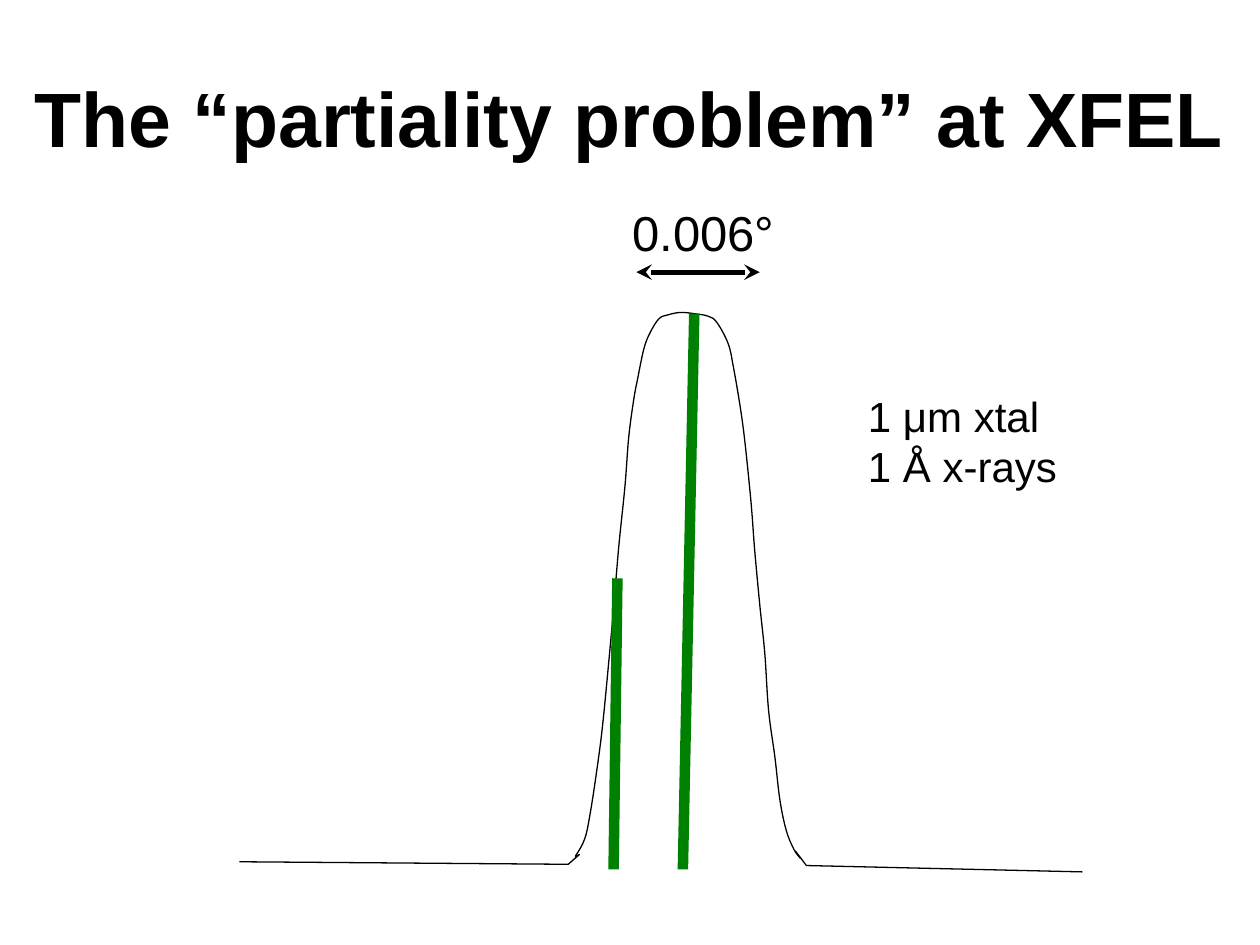
from pptx import Presentation
from pptx.dml.color import RGBColor
from pptx.enum.shapes import MSO_CONNECTOR
from pptx.enum.text import MSO_ANCHOR, MSO_AUTO_SIZE, PP_ALIGN
from pptx.oxml.ns import qn
from pptx.util import Inches, Pt
from lxml import etree

STRAIGHT = MSO_CONNECTOR.STRAIGHT
TOP, MIDDLE = MSO_ANCHOR.TOP, MSO_ANCHOR.MIDDLE
LEFT, CENTER = PP_ALIGN.LEFT, PP_ALIGN.CENTER
FIT_SHAPE = MSO_AUTO_SIZE.SHAPE_TO_FIT_TEXT

COLUMNS, ROWS = 100, 75
BLACK, WHITE, GREEN = "000000", "FFFFFF", "008000"

# Rocking curve in grid units: left foot, up over the peak, right foot
BASELINE_START, BASELINE_END = (19, 68.4), (85.9, 69.2)
BELL = [
    (45.1, 68.6), (45.7, 67.9), (46.4, 66.6), (46.8, 64.8), (47.3, 61.6),
    (47.8, 57.8), (48.3, 52.7), (48.7, 48.3), (49.1, 43.5), (49.6, 38.6),
    (49.9, 34.7), (50.3, 31.7), (50.6, 30.1), (51.1, 27.7), (51.6, 26.4),
    (52.3, 25.3), (53, 25), (54, 24.8), (55.1, 24.9), (56.2, 25.1),
    (56.9, 25.6), (57.8, 27.3), (58.2, 29.1), (58.7, 32), (59.1, 34.9),
    (59.6, 39.8), (59.9, 43.7), (60.3, 48), (60.7, 51.9), (61, 56.4),
    (61.5, 60.1), (61.9, 63.5), (62.4, 65.9), (63, 67.4), (63.5, 68.1),
    (64, 68.7),
]
# Control points of the two small hooks at the feet
LEFT_HOOK = [(46.8, 67.1), (45.5, 68.3)]
RIGHT_HOOK = [(63.7, 68.4), (62.2, 66.3)]


def color(hex_string):
    return RGBColor.from_string(hex_string)


def bezier_controls(points):
    """Control points of a smooth curve, one pair for each segment."""
    padded = [points[0], *points, points[-1]]
    return [
        [tuple(q + (r - p) / 6 for p, q, r in zip(a, b, c)),
         tuple(r - (s - q) / 6 for q, r, s in zip(b, c, d))]
        for a, b, c, d in zip(padded, padded[1:], padded[2:], padded[3:])]


class SlideBuilder:
    font = "Arial"

    def __init__(self):
        self.deck = Presentation()
        self.deck.slide_width, self.deck.slide_height = Inches(10), Inches(7.5)
        self.slide = self.deck.slides.add_slide(self.deck.slide_layouts[6])

    def x(self, column):
        return round(self.deck.slide_width * column / COLUMNS)

    def y(self, row):
        return round(self.deck.slide_height * row / ROWS)

    def text(self, words, column, row, width, height, size, bold=False,
             align=LEFT, anchor=TOP, wrap=False, group=None):
        box = (group or self.slide).shapes.add_textbox(
            self.x(column), self.y(row), self.x(width), self.y(height))
        frame = box.text_frame
        frame.text = words
        frame.word_wrap = wrap
        frame.vertical_anchor = anchor
        if not wrap:
            frame.auto_size = FIT_SHAPE
        for paragraph in frame.paragraphs:
            paragraph.alignment = align
            for run in paragraph.runs:
                run.font.name, run.font.size = self.font, Pt(size)
                run.font.bold = bold
                run.font.color.rgb = color(BLACK)

    def line(self, start, end, hex_color, width, arrows=False, group=None):
        connector = (group or self.slide).shapes.add_connector(
            STRAIGHT, self.x(start[0]), self.y(start[1]),
            self.x(end[0]), self.y(end[1]))
        connector.line.color.rgb = color(hex_color)
        connector.line.width = Pt(width)
        if arrows:
            outline = connector.line._get_or_add_ln()
            for tag in ("a:headEnd", "a:tailEnd"):
                etree.SubElement(outline, qn(tag), type="stealth")
        etree.SubElement(connector._element.spPr, qn("a:effectLst"))

    def curve(self, points, controls, hex_fill, hex_line, width):
        """Draw an outline; segments with control points become curves."""
        scaled = [(self.x(column), self.y(row)) for column, row in points]
        builder = self.slide.shapes.build_freeform(*scaled[0])
        builder.add_line_segments(scaled[1:], close=False)
        outline = builder.convert_to_shape()
        outline.shadow.inherit = False
        outline.fill.solid()
        outline.fill.fore_color.rgb = color(hex_fill)
        outline.line.color.rgb = color(hex_line)
        outline.line.width = Pt(width)

        segments = list(outline._element.iter(qn("a:lnTo")))
        for segment, pair in zip(segments, controls):
            if not pair:
                continue
            bezier = etree.Element(qn("a:cubicBezTo"))
            for column, row in pair:
                etree.SubElement(bezier, qn("a:pt"),
                                 x=str(self.x(column) - outline.left),
                                 y=str(self.y(row) - outline.top))
            bezier.append(segment[0])
            segment.getparent().replace(segment, bezier)


def main():
    page = SlideBuilder()

    # Title
    page.text("The “partiality problem” at XFEL", 0, 3, 100, 12.5, 44,
              bold=True, align=CENTER, anchor=MIDDLE, wrap=True)

    # Rocking curve: straight baselines on both sides of the bell
    flanks = bezier_controls(BELL)[1:-1]
    page.curve([BASELINE_START, *BELL, BASELINE_END],
               [None, LEFT_HOOK, *flanks, RIGHT_HOOK, None],
               WHITE, BLACK, 0.75)

    # Partial reflection on the flank
    page.line((48.7, 69), (49, 45.9), GREEN, 6)

    # Width of the peak
    peak_width = page.slide.shapes.add_group_shape()
    page.line((50.5, 21.6), (60.3, 21.6), BLACK, 3, arrows=True,
              group=peak_width)
    page.text("0.006°", 49.2, 15.6, 13.5, 5.7, 28, group=peak_width)

    # Conditions
    page.text("1 μm xtal\n1 Å x-rays", 67.9, 30.5, 17.2, 9.1, 24)

    # Full reflection at the peak
    page.line((54.2, 69), (55.1, 24.9), GREEN, 6)

    page.deck.save("out.pptx")


if __name__ == "__main__":
    main()
